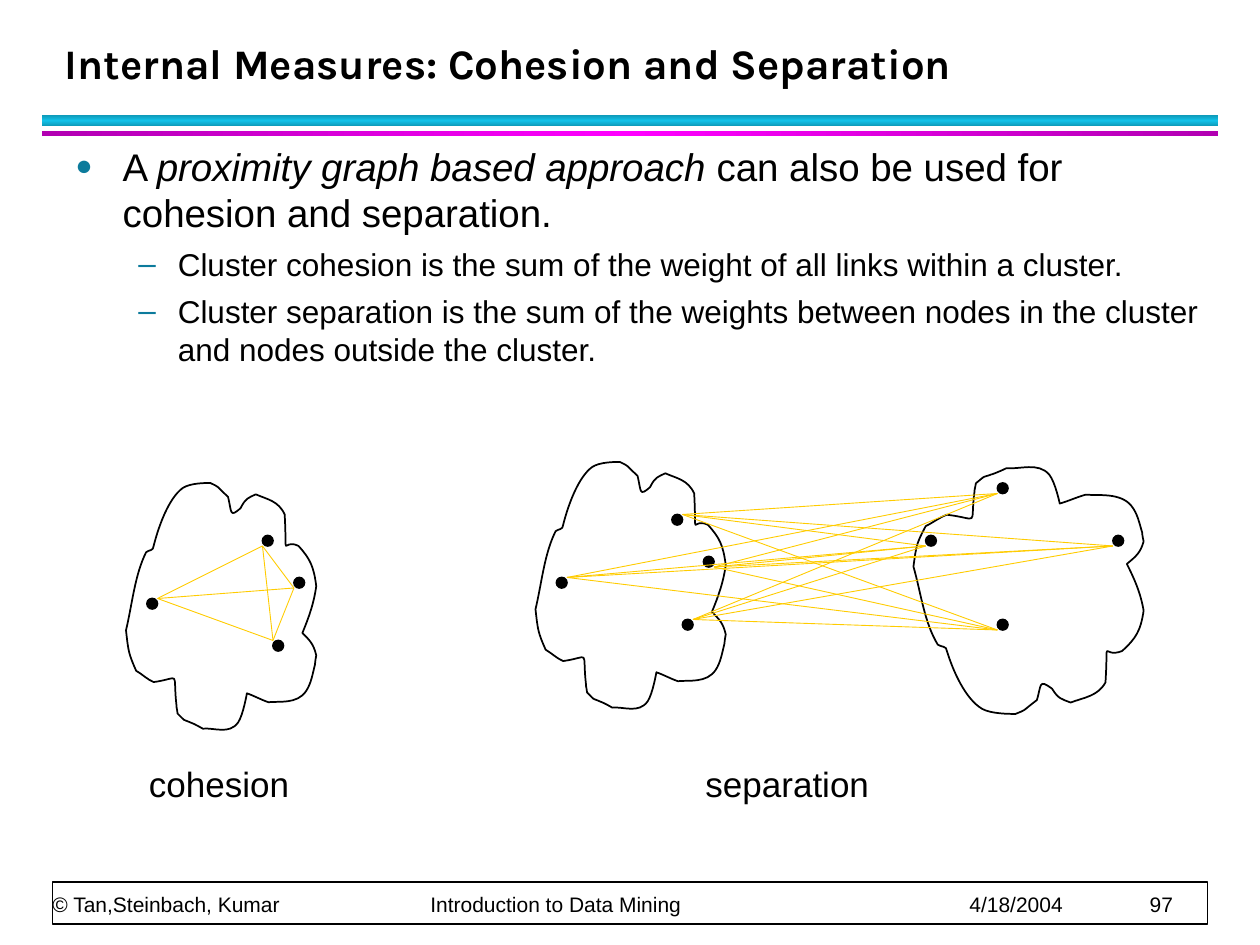
from copy import deepcopy
from itertools import combinations, product

from lxml import etree
from pptx import Presentation
from pptx.dml.color import RGBColor
from pptx.enum.shapes import MSO_CONNECTOR, MSO_SHAPE
from pptx.enum.text import MSO_ANCHOR
from pptx.oxml.ns import qn
from pptx.util import Pt

STRAIGHT = MSO_CONNECTOR.STRAIGHT
RECTANGLE, OVAL = MSO_SHAPE.RECTANGLE, MSO_SHAPE.OVAL
TOP, BOTTOM = MSO_ANCHOR.TOP, MSO_ANCHOR.BOTTOM

COLORS = {
    "ink": "000000", "paper": "FFFFFF", "link": "FFCC00", "bullet": "0C7B9C",
    "cyan": "12C2E9", "cyan_dark": "0E9BBA",
    "magenta": "FF00FF", "magenta_dark": "B200B2",
}
DOT = 6

# Cluster outline: a start point, then three points for each curve
OUTLINE_START = (11.5, 39.6)
OUTLINE_CURVES = [
    (5, 52.6), (3.6, 69.1), (0, 84.2),
    (1.4, 96.5), (1.4, 97.2), (5.8, 107.3),
    (9.4, 109.4), (12.2, 112.3), (15.8, 113.8),
    (31.7, 111.6), (26.6, 106.6), (28.8, 126.7),
    (28.8, 128.9), (29.5, 130.3), (29.5, 131.8),
    (34.6, 136.8), (31.7, 134.6), (36.7, 136.8),
    (38.9, 137.5), (43.9, 140.4), (43.9, 140.4),
    (50.4, 139.7), (59, 144), (64.1, 136.8),
    (67, 132.5), (69.1, 120.2), (69.1, 120.2),
    (73.4, 121.7), (77, 123.8), (81.4, 125.3),
    (87.1, 124.6), (97.9, 126.7), (103, 118.8),
    (105.8, 114.5), (106.6, 109.4), (108, 103.7),
    (108, 102.2), (108.7, 98.6), (108.7, 98.6),
    (107.3, 92.2), (105.1, 90), (100.8, 85.7),
    (104.4, 77), (107.3, 69.1), (108.7, 59),
    (107.3, 47.5), (105.1, 43.2), (98.6, 36),
    (88.6, 31), (92.2, 46.8), (90.7, 18),
    (87.1, 10.1), (80.6, 9.4), (74.2, 6.5),
    (69.8, 8.6), (68.4, 8.6), (65.5, 14.4),
    (59, 20.2), (60.5, 16.6), (58.3, 7.9),
    (50.4, 0.7), (54, 2.9), (48.2, 0),
    (45.4, 0), (36.7, 0), (32.4, 2.9),
    (24.5, 8.6), (18.7, 24.5), (15.8, 36),
    (15.8, 38.9), (13, 38.2), OUTLINE_START,
]


def rgb(name):
    return RGBColor.from_string(COLORS[name])


class SlideBuilder:
    def __init__(self, slide, font="Arial"):
        self.slide = slide
        self.shapes = slide.shapes
        self.font = font

    def outline(self, shape, fill=None):
        shape.shadow.inherit = False
        if fill:
            shape.fill.solid()
            shape.fill.fore_color.rgb = rgb(fill)
        else:
            shape.fill.background()
        shape.line.color.rgb = rgb("ink")
        shape.line.width = Pt(1)

    def shape(self, kind, left, top, width, height, fill):
        shape = self.shapes.add_shape(kind, Pt(left), Pt(top), Pt(width), Pt(height))
        self.outline(shape, fill)
        return shape

    def gradient_bar(self, left, top, width, height, edge, middle, angle):
        bar = self.shape(RECTANGLE, left, top, width, height, edge)
        bar.line.fill.background()
        bar.fill.gradient()
        bar.fill.gradient_angle = angle
        stop_list = bar._element.spPr.find(".//" + qn("a:gsLst"))
        stop_list.insert(1, deepcopy(stop_list[0]))
        stops = zip(bar.fill.gradient_stops, (0, 0.5, 1), (edge, middle, edge))
        for stop, position, color in stops:
            stop.position = position
            stop.color.rgb = rgb(color)

    def cluster(self, left, top, stretch=1, flip=1):
        def place(point):
            return Pt(left + point[0] * stretch), Pt(top + point[1] * flip)

        builder = self.shapes.build_freeform(*place(OUTLINE_START))
        builder.add_line_segments([place(point) for point in OUTLINE_CURVES], close=True)
        shape = builder.convert_to_shape()
        self.outline(shape)
        # Join every three line points into one curve
        lines = list(shape._element.iter(qn("a:lnTo")))
        for first in range(0, len(lines), 3):
            curve = etree.Element(qn("a:cubicBezTo"))
            lines[first].addprevious(curve)
            for line in lines[first:first + 3]:
                curve.append(line[0])
                line.getparent().remove(line)

    def dots(self, points):
        for left, top in points:
            self.shape(OVAL, left, top, DOT, DOT, "ink")

    def links(self, pairs):
        for start, end in pairs:
            link = self.shapes.add_connector(STRAIGHT, *map(Pt, start + end))
            link.line.color.rgb = rgb("link")
            link.line.width = Pt(0.5)
            etree.SubElement(link._element.spPr, qn("a:effectLst"))

    def text(self, left, top, width, height, content, size, font=None,
             bold=False, wrap=True, anchor=TOP, line_spacing=None):
        box = self.shapes.add_textbox(Pt(left), Pt(top), Pt(width), Pt(height))
        frame = box.text_frame
        frame.text = content
        frame.word_wrap = wrap
        frame.vertical_anchor = anchor
        paragraph = frame.paragraphs[0]
        if line_spacing:
            paragraph.line_spacing = Pt(line_spacing)
        self.format_run(paragraph.runs[0], size, font, bold)
        return frame

    def format_run(self, run, size, font=None, bold=False, italic=False):
        run.font.name = font or self.font
        run.font.size = Pt(size)
        run.font.bold = bold
        run.font.italic = italic
        run.font.color.rgb = rgb("ink")

    def bullet(self, paragraph, char, margin, hanging, percent=100):
        properties = paragraph._p.get_or_add_pPr()
        properties.set("marL", str(Pt(margin)))
        properties.set("indent", str(-Pt(hanging)))
        color = etree.SubElement(properties, qn("a:buClr"))
        etree.SubElement(color, qn("a:srgbClr"), val=COLORS["bullet"])
        etree.SubElement(properties, qn("a:buSzPct"), val=str(percent * 1000))
        etree.SubElement(properties, qn("a:buFont"), typeface=self.font)
        etree.SubElement(properties, qn("a:buChar"), char=char)

    def body(self, left, top, width, height, lead, points):
        box = self.shapes.add_textbox(Pt(left), Pt(top), Pt(width), Pt(height))
        frame = box.text_frame
        frame.word_wrap = True
        paragraph = frame.paragraphs[0]
        paragraph.space_after = Pt(4)
        for content, italic in lead:
            run = paragraph.add_run()
            run.text = content
            self.format_run(run, 22, italic=italic)
        self.bullet(paragraph, "●", 27, 27, 75)
        for point in points:
            paragraph = frame.add_paragraph()
            paragraph.text = point
            paragraph.level = 1
            paragraph.space_before = Pt(1.5)
            paragraph.space_after = Pt(4)
            self.format_run(paragraph.runs[0], 18)
            self.bullet(paragraph, "–", 58.5, 22.5)

    def footer(self, left, top, width, height, parts, tabs):
        frame = self.text(left, top, width, height, "\t".join(parts), 12,
                          anchor=BOTTOM, line_spacing=20)
        frame.margin_left = frame.margin_right = 0
        frame.margin_top = frame.margin_bottom = 0
        properties = frame.paragraphs[0]._p.get_or_add_pPr()
        tab_list = etree.SubElement(properties, qn("a:tabLst"))
        for tab in tabs:
            etree.SubElement(tab_list, qn("a:tab"), pos=str(Pt(tab)), algn="l")


def main():
    presentation = Presentation()
    presentation.slide_width, presentation.slide_height = Pt(720), Pt(540)
    page = SlideBuilder(presentation.slides.add_slide(presentation.slide_layouts[6]))

    # Rules and footer
    page.gradient_bar(24, 66, 672, 6, "cyan_dark", "cyan", 90)
    page.gradient_bar(24, 75, 672, 3, "magenta_dark", "magenta", 0)
    page.shape(RECTANGLE, 30, 504, 660, 24, "paper")
    page.footer(30, 504, 659, 20, ["© Tan,Steinbach, Kumar", "Introduction to Data Mining",
                                   "4/18/2004", "97"], [216, 524, 627])

    # Title and body
    page.text(30, 12, 652, 42, "Internal Measures: Cohesion and Separation", 24,
              font="Karla", bold=True, anchor=BOTTOM, line_spacing=36)
    page.body(36, 78, 666, 420,
              [("A ", False), ("proximity graph based approach ", True),
               ("can also be used for cohesion and separation.", False)],
              ["Cluster cohesion is the sum of the weight of all links within a cluster.",
               "Cluster separation is the sum of the weights between nodes in the cluster "
               "and nodes outside the cluster."])

    # Separation: every node of one cluster linked to every node of the other
    left_nodes = [(390, 354), (384, 294), (318, 330), (402, 318)]
    right_nodes = [(636, 306), (529, 306), (570, 354), (570, 276)]
    page.cluster(306, 264)
    page.dots(left_nodes)
    page.cluster(522, 408, stretch=1.21, flip=-1)
    page.dots(right_nodes)
    left_ends = [(396, 354), (390, 294), (324, 330), (408, 324)]
    right_ends = [(x, y + DOT) for x, y in right_nodes]
    page.links(product(left_ends, right_ends))

    # Cohesion: every pair of nodes linked within the cluster
    page.cluster(72, 276)
    page.dots([(x - 234, y + 12) for x, y in left_nodes])
    page.links(combinations([(156, 366), (150, 312), (90, 342), (168, 336)], 2))

    # Captions
    page.text(78, 432, 98, 31, "cohesion", 20, wrap=False)
    page.text(396, 432, 112, 31, "separation", 20, wrap=False)

    presentation.save("out.pptx")


if __name__ == "__main__":
    main()
